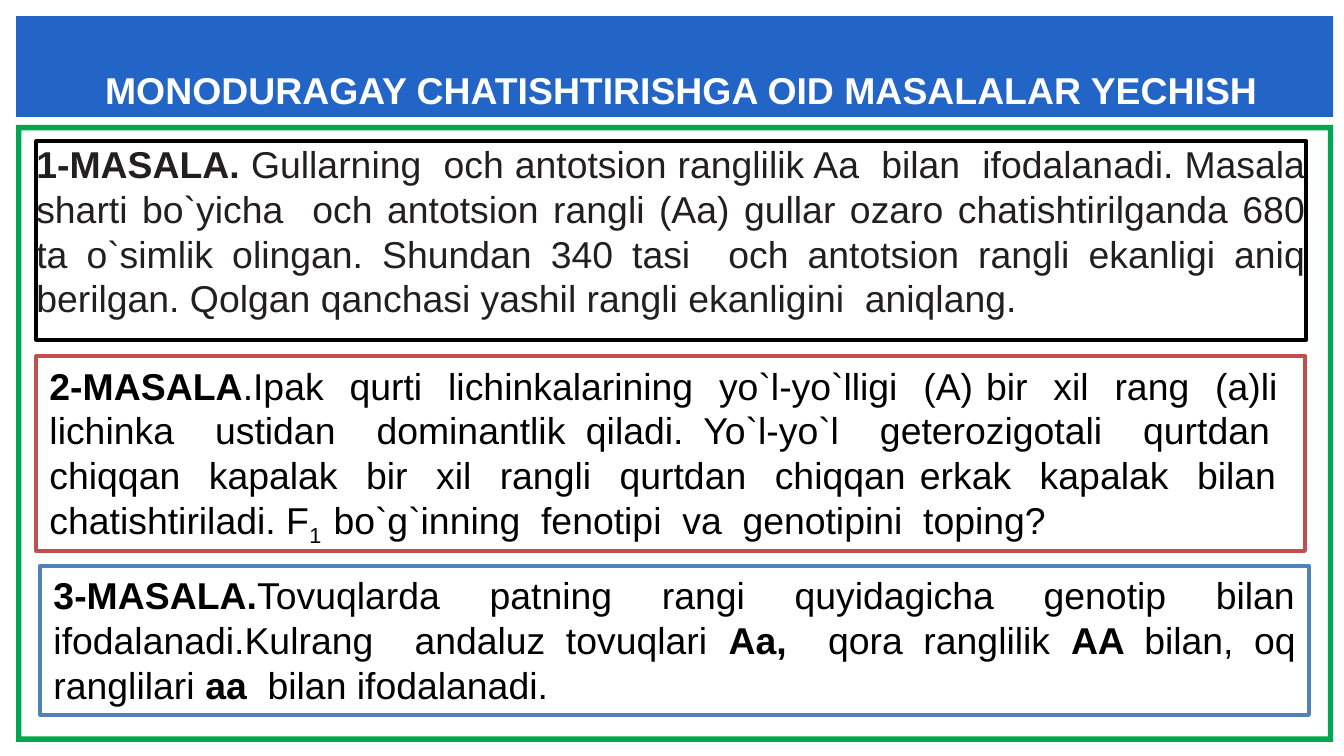
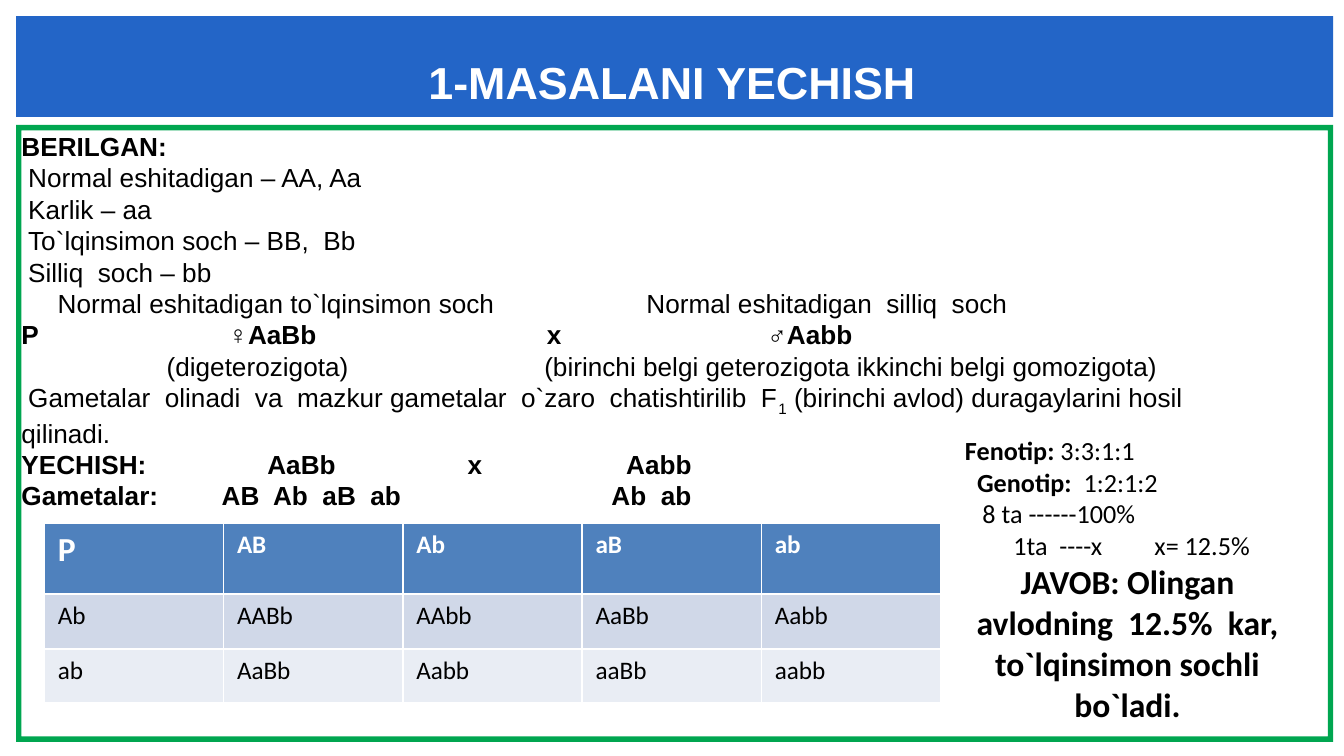
from lxml.etree import SubElement
from pptx import Presentation
from pptx.dml.color import RGBColor
from pptx.enum.shapes import MSO_SHAPE
from pptx.enum.text import MSO_ANCHOR, MSO_AUTO_SIZE, PP_ALIGN
from pptx.oxml.ns import qn
from pptx.util import Inches, Pt

WIDTH = 10
HEIGHT = WIDTH * 9 / 16
LEFT, RIGHT = 0.12, 9.92
BAND_TOP, BAND_BOTTOM = 0.12, 0.87
FRAME_TOP, FRAME_BOTTOM, FRAME_THICKNESS = 0.93, 5.52, 0.04

COLOURS = {
    "band": "2365C7", "frame": "00A650", "white": "FFFFFF", "black": "000000",
    "ink": "231F20", "red": "C0504D", "blue": "4F81BD",
    "row_dark": "D0D8E8", "row_light": "E9EDF4",
}

# In all texts, *...* is bold and ~...~ is subscript.
PROBLEMS_TITLE = "MONODURAGAY CHATISHTIRISHGA OID MASALALAR YECHISH"
PROBLEMS = [
    {"at": (0.27, 1.05, 9.45, 1.48), "line": "black", "colour": "ink", "margins": (0, 0),
     "text": "*1-MASALA. *Gullarning  och antotsion ranglilik Aa  bilan  ifodalanadi. Masala "
             "sharti bo`yicha  och antotsion rangli (Aa) gullar ozaro chatishtirilganda 680 ta "
             "o`simlik olingan. Shundan 340 tasi  och antotsion rangli ekanligi aniq berilgan. "
             "Qolgan qanchasi yashil rangli ekanligini  aniqlang."},
    {"at": (0.27, 2.65, 9.44, 1.45), "line": "red", "colour": "black", "margins": (0.1, 0.05),
     "text": "*2-MASALA*.Ipak  qurti  lichinkalarining  yo`l-yo`lligi  (A) bir  xil  rang  (a)li  "
             "lichinka  ustidan  dominantlik qiladi. Yo`l-yo`l  geterozigotali  qurtdan  chiqqan  "
             "kapalak  bir  xil  rangli  qurtdan  chiqqan erkak  kapalak  bilan  chatishtiriladi. "
             "F~1  ~bo`g`inning  fenotipi  va  genotipini  toping?"},
    {"at": (0.3, 4.21, 9.44, 1.11), "line": "blue", "colour": "black", "margins": (0.1, 0.05),
     "text": "*3-MASALA.*Tovuqlarda patning rangi quyidagicha genotip bilan "
             "ifodalanadi.Kulrang  andaluz tovuqlari *Aa,  *qora ranglilik *AA *bilan, "
             "oq ranglilari *aa  *bilan ifodalanadi."},
]

SOLUTION_TITLE = "1-MASALANI YECHISH"
# Text, first-line indent, tab stops
SOLUTION = [
    ("*BERILGAN:*", 0, ()),
    ("Normal eshitadigan – AA, Aa", 0.05, ()),
    ("Karlik – aa", 0.05, ()),
    ("To`lqinsimon soch – BB,  Bb", 0.05, ()),
    ("Silliq  soch – bb", 0.05, ()),
    ("\tNormal eshitadigan to`lqinsimon soch\tNormal eshitadigan  silliq  soch", 0, (0.27, 4.65)),
    ("*P\t♀AaBb\tx\t♂Aabb*", 0, (1.54, 3.91, 5.55)),
    ("\t(digeterozigota)\t(birinchi belgi geterozigota ikkinchi belgi gomozigota)",
     0, (1.08, 3.89)),
    ("Gametalar  olinadi  va  mazkur gametalar  o`zaro  chatishtirilib  F~1~ "
     "(birinchi avlod) duragaylarini hosil qilinadi.", 0.05, ()),
    ("*YECHISH:\tAaBb\tx\tAabb*", 0, (1.83, 3.32, 4.5)),
    ("*Gametalar:\tAB  Ab  aB  ab\tAb  ab*", 0, (1.49, 4.39)),
]
CROSSES = [
    ("P", "AB", "Ab", "aB", "ab"),
    ("Ab", "AABb", "AAbb", "AaBb", "Aabb"),
    ("ab", "AaBb", "Aabb", "aaBb", "aabb"),
]
CROSS_FILLS = ("blue", "row_dark", "row_light")
CROSS_HEIGHTS = (0.53, 0.41, 0.4)
RATIOS = [
    ("*Fenotip:* 3:3:1:1", 0, ()),
    ("*Genotip:*  1:2:1:2", 0.09, ()),
    ("8 ta ------100%", 0.13, ()),
    ("\t1ta  ----x\tx= 12.5%", 0, (0.36, 1.41)),
]
ANSWER = "*JAVOB: Olingan avlodning  12.5%  kar, to`lqinsimon sochli bo`ladi.*"


def colour_of(name):
    return RGBColor.from_string(COLOURS[name])


def inches(values):
    return [Inches(value) for value in values]


def write(frame, text, size=14, font="Arial", colour="black", align=PP_ALIGN.LEFT,
          indent=0, tabs=()):
    """Add one marked-up paragraph, using the first one while it is empty."""
    para = frame.paragraphs[0] if not frame.text else frame.add_paragraph()
    para.alignment = align
    para.space_before = para.space_after = Pt(0)
    properties = para._p.get_or_add_pPr()
    if indent:
        properties.set("marL", "0")
        properties.set("indent", str(Inches(indent)))
    if tabs:
        stops = SubElement(properties, qn("a:tabLst"))
        for tab in tabs:
            SubElement(stops, qn("a:tab"), pos=str(Inches(tab)), algn="l")
    for bold, part in enumerate(text.split("*")):
        for lowered, piece in enumerate(part.split("~")):
            if not piece:
                continue
            span = para.add_run()
            span.text = piece
            span.font.name, span.font.size = font, Pt(size)
            span.font.bold = bold % 2 == 1
            span.font.color.rgb = colour_of(colour)
            if lowered % 2:
                span.font._element.set("baseline", "-25000")


def prepare(frame, margins=(0, 0)):
    frame.word_wrap = True
    frame.auto_size = MSO_AUTO_SIZE.NONE
    frame.vertical_anchor = MSO_ANCHOR.TOP
    frame.margin_left = frame.margin_right = Inches(margins[0])
    frame.margin_top = frame.margin_bottom = Inches(margins[1])


def paint(shape, fill, line=None):
    shape.shadow.inherit = False
    shape.fill.solid()
    shape.fill.fore_color.rgb = colour_of(fill)
    if line:
        shape.line.color.rgb = colour_of(line)
        shape.line.width = Pt(2)
    else:
        shape.line.fill.background()


def corners(inset):
    """Corners of the frame, moved inwards, in EMU."""
    left, right = inches((LEFT + inset, RIGHT - inset))
    top, bottom = inches((FRAME_TOP + inset, FRAME_BOTTOM - inset))
    return [(left, top), (right, top), (right, bottom), (left, bottom)]


def add_page(deck, heading, at, size):
    """Add a page with the green frame, the blue band and its title."""
    page = deck.slides.add_slide(deck.slide_layouts[5])
    outer, inner = corners(0), corners(FRAME_THICKNESS)
    builder = page.shapes.build_freeform(*outer[0])
    builder.add_line_segments(outer[1:], close=True)
    builder.move_to(*inner[0])
    builder.add_line_segments(inner[:0:-1], close=True)
    paint(builder.convert_to_shape(), "frame")
    band = page.shapes.add_shape(
        MSO_SHAPE.RECTANGLE,
        *inches((LEFT, BAND_TOP, RIGHT - LEFT, BAND_BOTTOM - BAND_TOP)))
    paint(band, "band")
    title = page.shapes.title
    title.left, title.top, title.width, title.height = inches(at)
    prepare(title.text_frame)
    write(title.text_frame, f"*{heading}*", size=size, colour="white", align=PP_ALIGN.CENTER)
    band._element.addnext(title._element)
    return page


def add_problem(page, problem):
    box = page.shapes.add_shape(MSO_SHAPE.RECTANGLE, *inches(problem["at"]))
    paint(box, "white", problem["line"])
    prepare(box.text_frame, problem["margins"])
    write(box.text_frame, problem["text"], size=20, colour=problem["colour"],
          align=PP_ALIGN.JUSTIFY)


def add_solution(page):
    box = page.shapes.add_textbox(*inches((0.16, 0.97, 8.73, 4.09)))
    prepare(box.text_frame)
    for text, indent, tabs in SOLUTION:
        write(box.text_frame, text, indent=indent, tabs=tabs)


def add_crosses(page):
    table = page.shapes.add_table(
        len(CROSSES), len(CROSSES[0]), *inches((0.33, 3.89, 6.67, sum(CROSS_HEIGHTS)))).table
    for row, texts in enumerate(CROSSES):
        table.rows[row].height = Inches(CROSS_HEIGHTS[row])
        for column, text in enumerate(texts):
            cell = table.cell(row, column)
            cell.fill.solid()
            cell.fill.fore_color.rgb = colour_of(CROSS_FILLS[row])
            write(cell.text_frame, text if row else f"*{text}*", font="Calibri",
                  size=18 if row == column == 0 else 13.5,
                  colour="black" if row else "white")


def add_answer(page):
    table = page.shapes.add_table(1, 1, *inches((7.08, 3.19, 2.62, 2.05))).table
    table.first_row = table.horz_banding = False
    cell = table.cell(0, 0)
    cell.fill.background()
    for text, indent, tabs in RATIOS:
        write(cell.text_frame, text, font="Calibri", indent=indent, tabs=tabs)
    write(cell.text_frame, ANSWER, font="Calibri", size=18, align=PP_ALIGN.CENTER)


def main():
    deck = Presentation()
    deck.slide_width, deck.slide_height = inches((WIDTH, HEIGHT))
    page = add_page(deck, PROBLEMS_TITLE, (0.14, 0.5, 9.86, 0.34), 20)
    for problem in PROBLEMS:
        add_problem(page, problem)
    page = add_page(deck, SOLUTION_TITLE, (0.52, 0.41, 8.96, 0.4), 24)
    add_solution(page)
    add_crosses(page)
    add_answer(page)
    deck.save("out.pptx")


if __name__ == "__main__":
    main()
